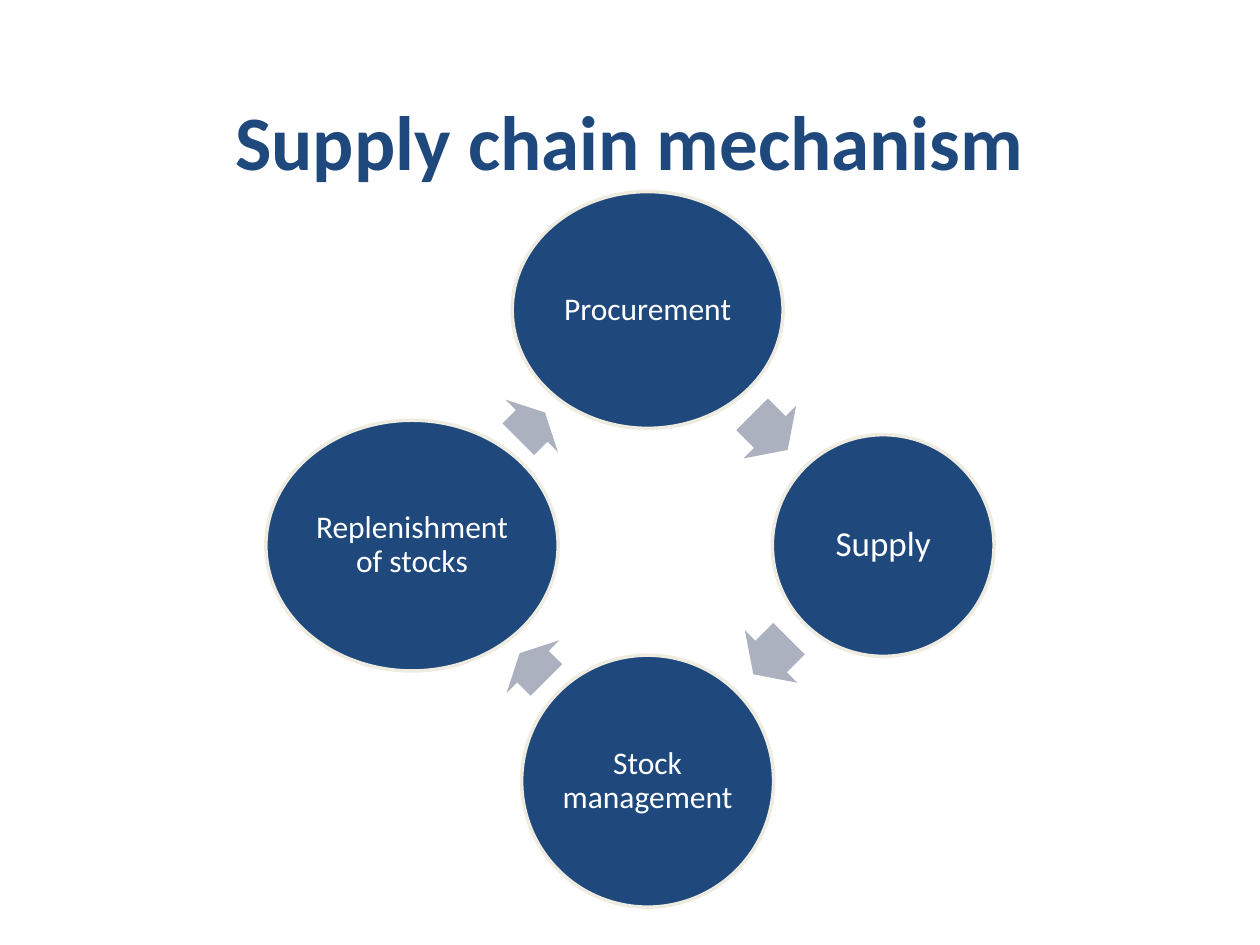
"""Build the supply chain mechanism slide: a cycle of four stages linked by arrows."""
from math import cos, radians, sin

from pptx import Presentation
from pptx.dml.color import RGBColor as RGB
from pptx.enum.shapes import MSO_SHAPE as SHAPE
from pptx.enum.text import MSO_ANCHOR as ANCHOR, PP_ALIGN as ALIGN
from pptx.util import Inches, Pt

THEME = {
    "font": "Calibri",
    "navy": RGB(0x1F, 0x49, 0x7D),
    "cream": RGB(0xEE, 0xEC, 0xE1),
    "grey": RGB(0xAC, 0xB1, 0xBF),
    "white": RGB(0xFF, 0xFF, 0xFF),
    "title": Pt(44),
    "large": Pt(20),
    "body": Pt(18),
    "outline": Pt(2),
}
CENTER_X, CENTER_Y, RADIUS = 5.14, 4.33, 1.87
STAGES = [
    ("Procurement", 2.15, 1.88, "body"),
    ("Supply", 1.76, 1.76, "large"),
    ("Stock management", 2, 2, "body"),
    ("Replenishment of stocks", 2.32, 1.99, "body"),
]
ARROWS = [(6.11, 3.43, 0.4), (6.12, 5.21, 0.4), (4.23, 5.29, 0.3), (4.22, 3.38, 0.3)]
ARROW_HEIGHT = 0.59


def add_centered(s, kind, x, y, w, h, fill):
    sp = s.shapes.add_shape(kind, Inches(x - w / 2), Inches(y - h / 2), Inches(w), Inches(h))
    sp.shadow.inherit = False
    sp.fill.solid()
    sp.fill.fore_color.rgb = THEME[fill]
    return sp


def write_text(sp, text, size, color, bold=False, inset=0.1):
    tf = sp.text_frame
    frame = {"word_wrap": True, "vertical_anchor": ANCHOR.MIDDLE}
    frame |= {f"margin_{side}": Inches(inset) for side in ("left", "right", "top", "bottom")}
    for name, value in frame.items():
        setattr(tf, name, value)
    p = tf.paragraphs[0]
    p.alignment = ALIGN.CENTER
    r = p.add_run()
    r.text = text
    for name, value in {"name": THEME["font"], "size": THEME[size], "bold": bold}.items():
        setattr(r.font, name, value)
    r.font.color.rgb = THEME[color]
    return p


prs = Presentation()
prs.slide_width, prs.slide_height = Inches(10), Inches(7.5)
s = prs.slides.add_slide(prs.slide_layouts[6])

title = s.shapes.add_textbox(Inches(0.5), Inches(0.67), Inches(9), Inches(0.88))
write_text(title, "Supply chain mechanism", "title", "navy", bold=True, inset=0.05)

for i, ((label, w, h, size), (arrow_x, arrow_y, arrow_w)) in enumerate(zip(STAGES, ARROWS)):
    angle = radians(90 * i - 90)
    x, y = CENTER_X + RADIUS * cos(angle), CENTER_Y + RADIUS * sin(angle)
    stage = add_centered(s, SHAPE.OVAL, x, y, w, h, "navy")
    stage.line.color.rgb = THEME["cream"]
    stage.line.width = THEME["outline"]
    p = write_text(stage, label, size, "white", inset=0.03)
    p.line_spacing = 0.9

    arrow = add_centered(s, SHAPE.RIGHT_ARROW, arrow_x, arrow_y, arrow_w, ARROW_HEIGHT, "grey")
    arrow.line.fill.background()
    arrow.rotation = 45 + 90 * i
    arrow.adjustments[0], arrow.adjustments[1] = 0.6, 0.5

prs.save("out.pptx")
